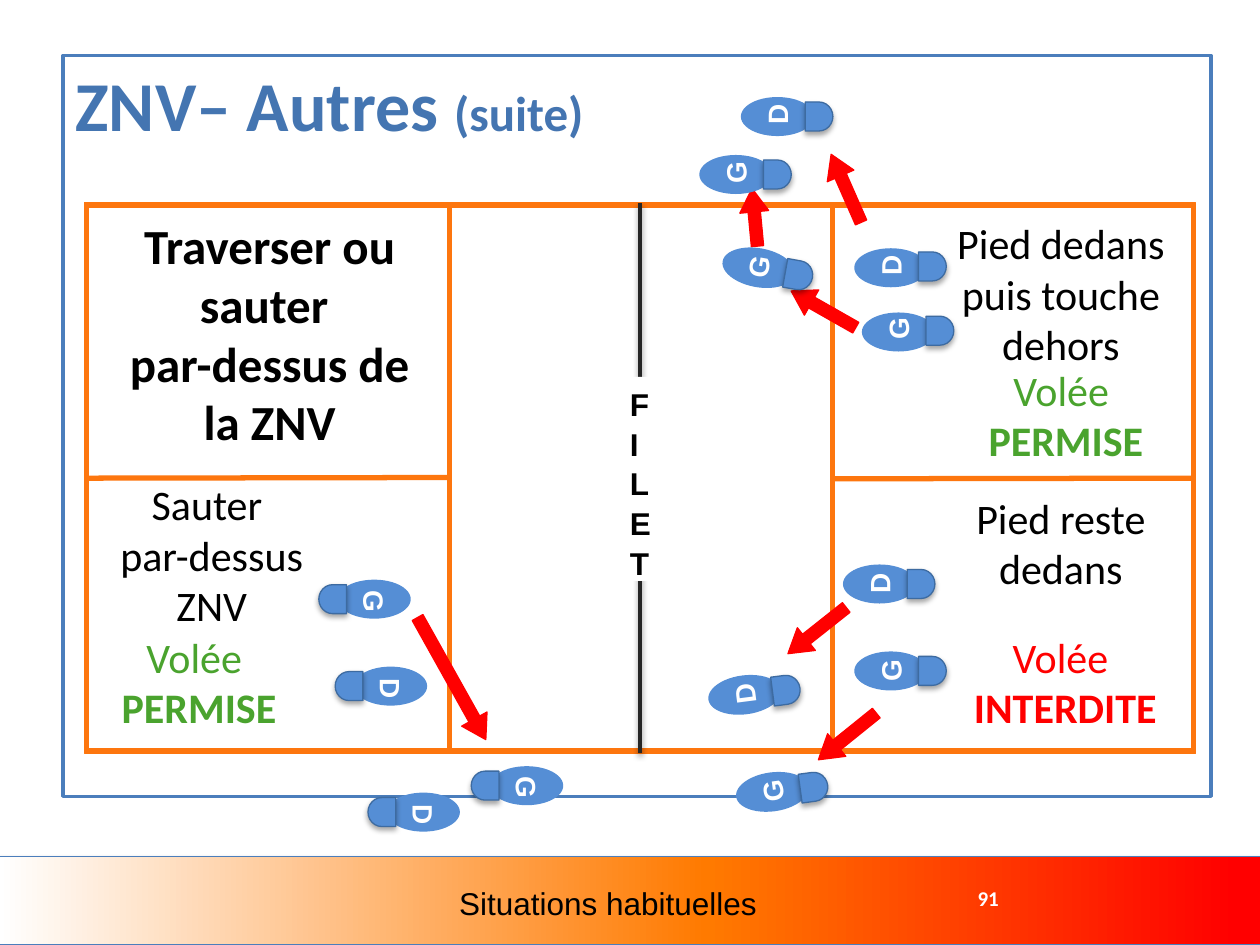
from math import cos, radians, sin

from pptx import Presentation
from pptx.dml.color import RGBColor
from pptx.enum.shapes import MSO_CONNECTOR, MSO_SHAPE
from pptx.enum.text import MSO_ANCHOR, MSO_AUTO_SIZE, PP_ALIGN
from pptx.oxml import parse_xml
from pptx.oxml.ns import nsdecls
from pptx.util import Inches, Pt

COLORS = {
    "white": "FFFFFF", "black": "000000", "title": "4475B1", "edge": "4B7EBC",
    "court": "FD760E", "net": "262626", "foot": "558ED5", "heel": "3D6BA1",
    "red": "FF0000", "green": "4AA32E", "amber": "FF7A00",
}
BASE = {"name": "Calibri", "size": Pt(24), "bold": False}
BIG = {"size": Pt(28), "bold": True}
STRONG = {"bold": True}
LETTER = {"name": "Arial", "size": Pt(16), "bold": True}
NET = {"name": "Arial", "size": Pt(18), "bold": True}
LEFT, MID = PP_ALIGN.LEFT, PP_ALIGN.CENTER


def rgb(name):
    return RGBColor.from_string(COLORS[name])


def emu(*nums):
    return [Inches(round(n, 2)) for n in nums]


def effect(shape, alpha=0, blur=3.1, dist=1.8):
    """Replace the theme shadow by a soft one, or by none."""
    drop = ""
    if alpha:
        drop = (f'<a:outerShdw blurRad="{Pt(blur)}" dist="{Pt(dist)}" dir="5400000" '
                f'rotWithShape="0"><a:srgbClr val="{COLORS["black"]}">'
                f'<a:alpha val="{alpha * 1000}"/></a:srgbClr></a:outerShdw>')
    shape._element.spPr.append(
        parse_xml(f'<a:effectLst {nsdecls("a")}>{drop}</a:effectLst>'))


def stroke(shape, color, width):
    shape.line.color.rgb = rgb(color)
    shape.line.width = Pt(width)


def block(shapes, kind, box, fill, line=None, turn=0, alpha=0):
    shape = shapes.add_shape(kind, *emu(*box))
    shape.rotation = turn
    shape.fill.solid()
    shape.fill.fore_color.rgb = rgb(fill)
    if line:
        stroke(shape, line, 0.75)
    else:
        shape.line.fill.background()
    effect(shape, alpha)
    return shape


def write(shape, runs, align=MID, wrap=True):
    """Fill a shape with one paragraph of (text, color, format) runs."""
    frame = shape.text_frame
    frame.word_wrap = wrap
    frame.auto_size = MSO_AUTO_SIZE.NONE
    frame.vertical_anchor = MSO_ANCHOR.TOP
    para = frame.paragraphs[0]
    para.alignment = align
    for text, color, style in runs:
        for i, part in enumerate(text.split("\n")):
            if i:
                para.add_line_break()
            if not part:
                continue
            run = para.add_run()
            run.text = part
            for key, value in {**BASE, **style}.items():
                setattr(run.font, key, value)
            run.font.color.rgb = rgb(color)
    return para


def label(shapes, box, runs, align=MID, wrap=True):
    shape = shapes.add_textbox(*emu(*box))
    write(shape, runs, align, wrap)
    return shape


def rule(shapes, start, end, color="court", width=3, alpha=0):
    line = shapes.add_connector(MSO_CONNECTOR.STRAIGHT, *emu(*start, *end))
    stroke(line, color, width)
    effect(line, alpha, dist=1.6)
    return line


def footer(slide, box):
    x, y, w, h = box
    band = slide.shapes.add_shape(MSO_SHAPE.RECTANGLE, *emu(*box))
    stops = "".join(
        f'<a:gs pos="{pos * 1000}"><a:srgbClr val="{COLORS[name]}"/></a:gs>'
        for pos, name in ((0, "white"), (56, "amber"), (98, "red")))
    band._element.spPr.insert(2, parse_xml(
        f'<a:gradFill {nsdecls("a")} rotWithShape="1"><a:gsLst>{stops}</a:gsLst>'
        '<a:lin ang="0" scaled="0"/></a:gradFill>'))
    stroke(band, "edge", 0.75)
    effect(band, 35)
    label(slide.shapes, (x + 7.67, y + 0.18, 0.48, 0.3),
          [("91", "white", {"size": Pt(12), "bold": True})], LEFT, False)
    label(slide.shapes, (x + 3.01, y + 0.17, 3.65, 0.4),
          [("Situations habituelles", "black", {**NET, "bold": False})])


def heading(slide, box):
    title = slide.shapes.title
    title.left, title.top, title.width, title.height = emu(*box)
    stroke(title, "edge", 2)
    write(title, [("ZNV– Autres ", "title", {"size": Pt(40), "bold": True}),
                  ("(suite)", "title", BIG)], LEFT)


def court(slide, box):
    x, y, w, h = box
    shapes = slide.shapes.add_group_shape().shapes
    edge = block(shapes, MSO_SHAPE.FRAME, box, "court", "court")
    edge.adjustments[0] = 0.008
    mid, low, near, far = y + h / 2, y + h, x + 2.9, x + 5.94
    # Net, then the zone lines
    net = rule(shapes, (x + w / 2, y), (x + w / 2, low), "net", 2, 38)
    net.begin_connect(edge, 0)
    net.end_connect(edge, 2)
    rule(shapes, (x, mid), (near, mid)).begin_connect(edge, 1)
    for side in (far, near):
        rule(shapes, (side, y), (side, low))
    rule(shapes, (far, mid + 0.01), (x + w, mid)).end_connect(edge, 3)
    # The narrow box stacks the letters
    sign = block(shapes, MSO_SHAPE.RECTANGLE,
                 (x + 4.23, y + 1.38, 0.36, 1.62), "white")
    write(sign, [("FILET", "black", NET)], LEFT).line_spacing = 1.05
    topic = block(slide.shapes, MSO_SHAPE.RECTANGLE,
                  (x + 0.19, y + 0.05, 2.56, 1.99), "white")
    write(topic, [("Traverser ou sauter \npar-dessus de la ZNV", "black", BIG)])


def foot(slide, x, y, turn, name):
    """Draw a sole centred on x, y with its heel along the turn."""
    shapes = slide.shapes.add_group_shape().shapes
    c, s = cos(radians(turn)), sin(radians(turn))
    block(shapes, MSO_SHAPE.FLOWCHART_CONNECTOR,
          (x - 0.29, y - 0.155, 0.58, 0.31), "foot", turn=turn)
    block(shapes, MSO_SHAPE.FLOWCHART_DELAY,
          (x + 0.33 * c - 0.11, y + 0.33 * s - 0.115, 0.22, 0.23),
          "foot", "heel", turn, 35)
    w = 0.38 if name == "G" else 0.36
    text = label(shapes, (x - w / 2, y - 0.02 * c - 0.185, w, 0.37),
                 [(name, "white", LETTER)], LEFT, False)
    text.rotation = (turn - 90) % 360


def scene(slide, box, case):
    """Place a case's captions, arrows and feet from the box's corner."""
    x, y = box[:2]
    (dx, dy, w, h), text = case["rule"]
    label(slide.shapes, (x + dx, y + dy, w, h), [(text, "black", {})])
    (dx, dy, w, h), text, color = case["verdict"]
    label(slide.shapes, (x + dx, y + dy, w, h),
          [("Volée \n", color, {}), (text, color, STRONG)], wrap=False)
    for dx, dy, size, turn in case["arrows"]:
        arrow = block(slide.shapes, MSO_SHAPE.LEFT_ARROW,
                      (x + dx - size / 2, y + dy - 0.115, size, 0.23),
                      "red", "red", turn)
        arrow.adjustments[0], arrow.adjustments[1] = 0.422, 0.812
    for dx, dy, turn, name in case["feet"]:
        foot(slide, x + dx, y + dy, turn, name)


JUMP = {
    "rule": ((0, -0.05, 2.02, 1.31), "Sauter \npar-dessus ZNV"),
    "verdict": ((0.19, 1.16, 1.44, 0.91), "PERMISE", "green"),
    "arrows": [(2.92, 1.59, 1.11, 240.8)],
    "feet": [(2.3, 0.96, 180, "G"), (2.43, 1.65, 180, "D"),
             (2.69, 2.65, 180, "D"), (3.51, 2.43, 180, "G")],
}
LEAVE = {
    "rule": ((0.74, 0.07, 2.14, 1.31), "Pied dedans puis touche dehors"),
    "verdict": ((1.13, 1.23, 1.44, 0.91), "PERMISE", "green"),
    "arrows": [(-0.62, 0.11, 0.46, 84.6), (-0.08, 0.85, 0.59, 29.6),
               (0.1, -0.12, 0.59, 66.3)],
    "feet": [(0.46, 0.51, 0, "D"), (0.52, 1.02, 0, "G"), (-0.59, 0.52, 10.2, "G"),
             (-0.77, -0.23, 0, "G"), (-0.44, -0.69, 0, "D")],
}
STAY = {
    "rule": ((0.74, 0.06, 2.14, 0.91), "Pied reste dedans"),
    "verdict": ((1.01, 1.16, 1.67, 0.91), "INTERDITE", "red"),
    "arrows": [(0.11, 2.05, 0.59, 321.1), (-0.13, 1.21, 0.59, 321.6)],
    "feet": [(0.46, 1.53, 0, "G"), (-0.48, 2.49, 352.3, "G"),
             (0.37, 0.84, 0, "D"), (-0.7, 1.72, 352.6, "D")],
}


def main():
    deck = Presentation()
    deck.slide_width, deck.slide_height = emu(10, 7.5)
    slide = deck.slides.add_slide(deck.slide_layouts[5])
    footer(slide, (-0.01, 6.8, 10.03, 0.7))
    heading(slide, (0.5, 0.44, 9.11, 5.88))
    court(slide, (0.67, 1.61, 8.82, 4.37))
    scene(slide, (0.67, 3.8, 2.9, 2.19), JUMP)
    scene(slide, (6.61, 1.61, 2.88, 2.19), LEAVE)
    scene(slide, (6.61, 3.8, 2.88, 2.19), STAY)
    deck.save("out.pptx")


if __name__ == "__main__":
    main()
